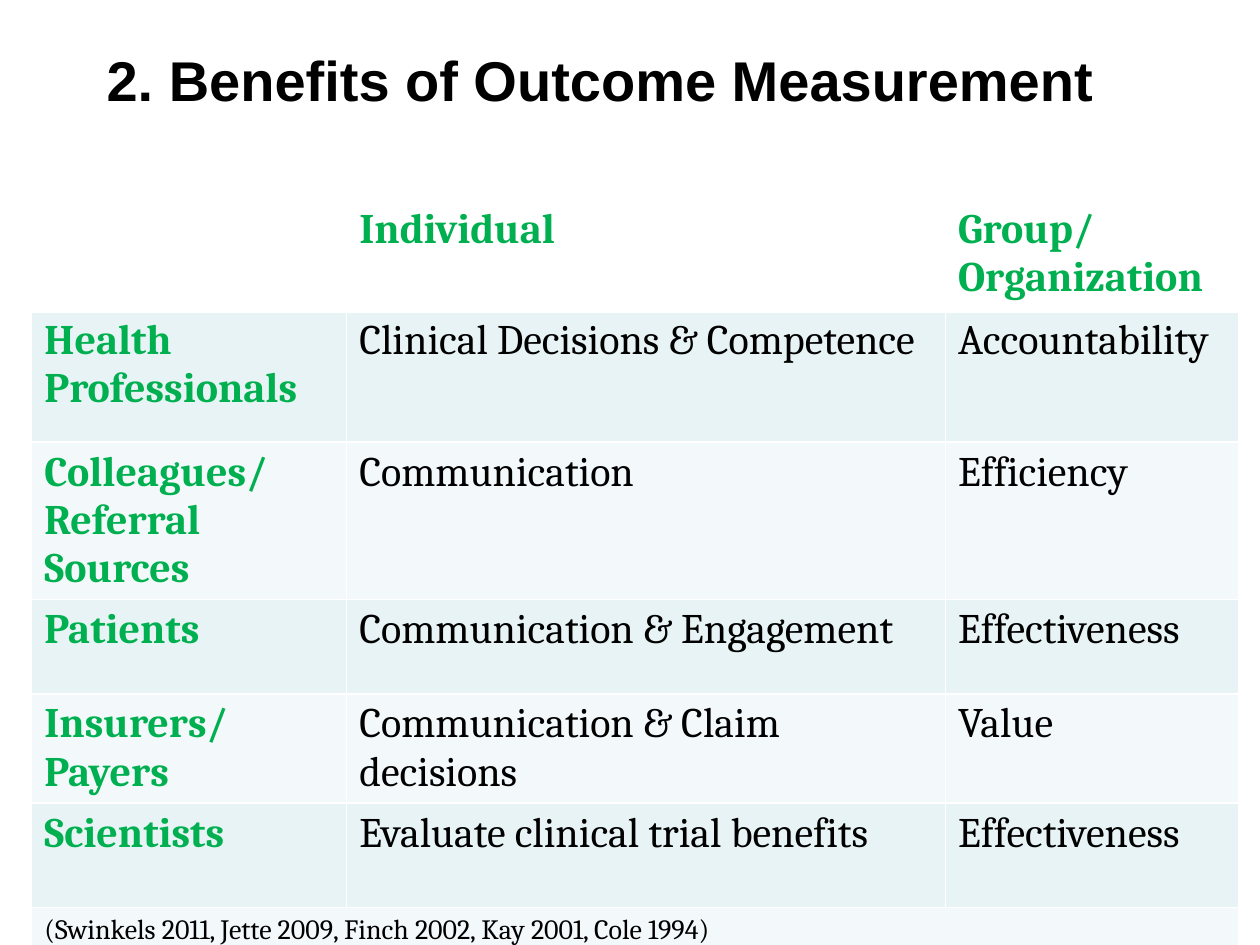
import pptx
import pptx.dml.color
import pptx.enum.text
import pptx.oxml
import pptx.oxml.ns
import pptx.util

Cm = pptx.util.Cm

# Content
TITLE = "2. Benefits of Outcome Measurement"
HEADER = ("", "Individual", "Group/ Organization")
BENEFITS = [
    ("Health\nProfessionals", "Clinical Decisions & Competence", "Accountability"),
    ("Colleagues/\nReferral Sources", "Communication", "Efficiency"),
    ("Patients", "Communication & Engagement", "Effectiveness"),
    ("Insurers/Payers", "Communication & Claim decisions", "Value"),
    ("Scientists", "Evaluate clinical trial benefits", "Effectiveness"),
]
CITATION = "(Swinkels 2011, Jette 2009, Finch 2002, Kay 2001, Cole 1994)"

# Sizes in centimetres
COLUMN_WIDTHS = (6.35, 12.07, 5.92)
ROW_HEIGHTS = (2.24, 2.65, 3.17, 1.9, 2.2, 2.11, 1.19)
BOTTOM_MARGIN = 0

THEME = {
    "title_font": "Arial", "table_font": "Cambria",
    "title_size": 32, "table_size": 24, "citation_size": 16,
    "text": "000000", "label": "00B050", "paper": "FFFFFF",
    "bands": ("E7F3F4", "F3F9FA"),
}


def write(frame, text, font=THEME["table_font"], size=THEME["table_size"],
          color=THEME["text"], bold=False):
    for index, line in enumerate(text.split("\n")):
        para = frame.add_paragraph() if index else frame.paragraphs[0]
        span = para.add_run()
        span.text = line
        span.font.name = font
        span.font.size = pptx.util.Pt(size)
        span.font.bold = bold
        span.font.color.rgb = pptx.dml.color.RGBColor.from_string(color)


def paint(cell, color, bottom=1):
    """Draw the cell borders, then fill the cell."""
    properties = cell._tc.get_or_add_tcPr()
    for side, width in (("L", 1), ("R", 1), ("T", 1), ("B", bottom)):
        properties.append(pptx.oxml.parse_xml(
            f'<a:ln{side} {pptx.oxml.ns.nsdecls("a")} w="{pptx.util.Pt(width)}">'
            f'<a:solidFill><a:srgbClr val="{THEME["paper"]}"/></a:solidFill></a:ln{side}>'))
    cell.fill.solid()
    cell.fill.fore_color.rgb = pptx.dml.color.RGBColor.from_string(color)
    cell.margin_bottom = Cm(BOTTOM_MARGIN)


deck = pptx.Presentation()
deck.slide_width, deck.slide_height = Cm(25.4), Cm(19.05)
page = deck.slides.add_slide(deck.slide_layouts[6])

# Title
box = page.shapes.add_textbox(Cm(1.9), Cm(0.85), Cm(21.8), Cm(1.48))
box.text_frame.word_wrap = True
box.text_frame.vertical_anchor = pptx.enum.text.MSO_ANCHOR.MIDDLE
write(box.text_frame, TITLE, font=THEME["title_font"], size=THEME["title_size"], bold=True)

# Table grid
table = page.shapes.add_table(
    len(ROW_HEIGHTS), len(COLUMN_WIDTHS), Cm(0.64), Cm(4.02),
    Cm(sum(COLUMN_WIDTHS)), Cm(sum(ROW_HEIGHTS))).table
table.first_row = table.horz_banding = False
for column, width in zip(table.columns, COLUMN_WIDTHS):
    column.width = Cm(width)
for row, height in zip(table.rows, ROW_HEIGHTS):
    row.height = Cm(height)

# Fills: white header, then alternating bands
for row_index, row in enumerate(table.rows):
    for cell in row.cells:
        if row_index == 0:
            paint(cell, THEME["paper"], bottom=3)
        else:
            paint(cell, THEME["bands"][(row_index - 1) % 2])

# Header and benefits: labels in the first row and first column
for row_index, values in enumerate([HEADER, *BENEFITS]):
    for column_index, value in enumerate(values):
        if value:
            is_label = row_index == 0 or column_index == 0
            write(table.cell(row_index, column_index).text_frame, value, bold=is_label,
                  color=THEME["label"] if is_label else THEME["text"])

# Citation across the last row
last = len(ROW_HEIGHTS) - 1
table.cell(last, 0).merge(table.cell(last, len(COLUMN_WIDTHS) - 1))
write(table.cell(last, 0).text_frame, CITATION, size=THEME["citation_size"])

deck.save("out.pptx")
